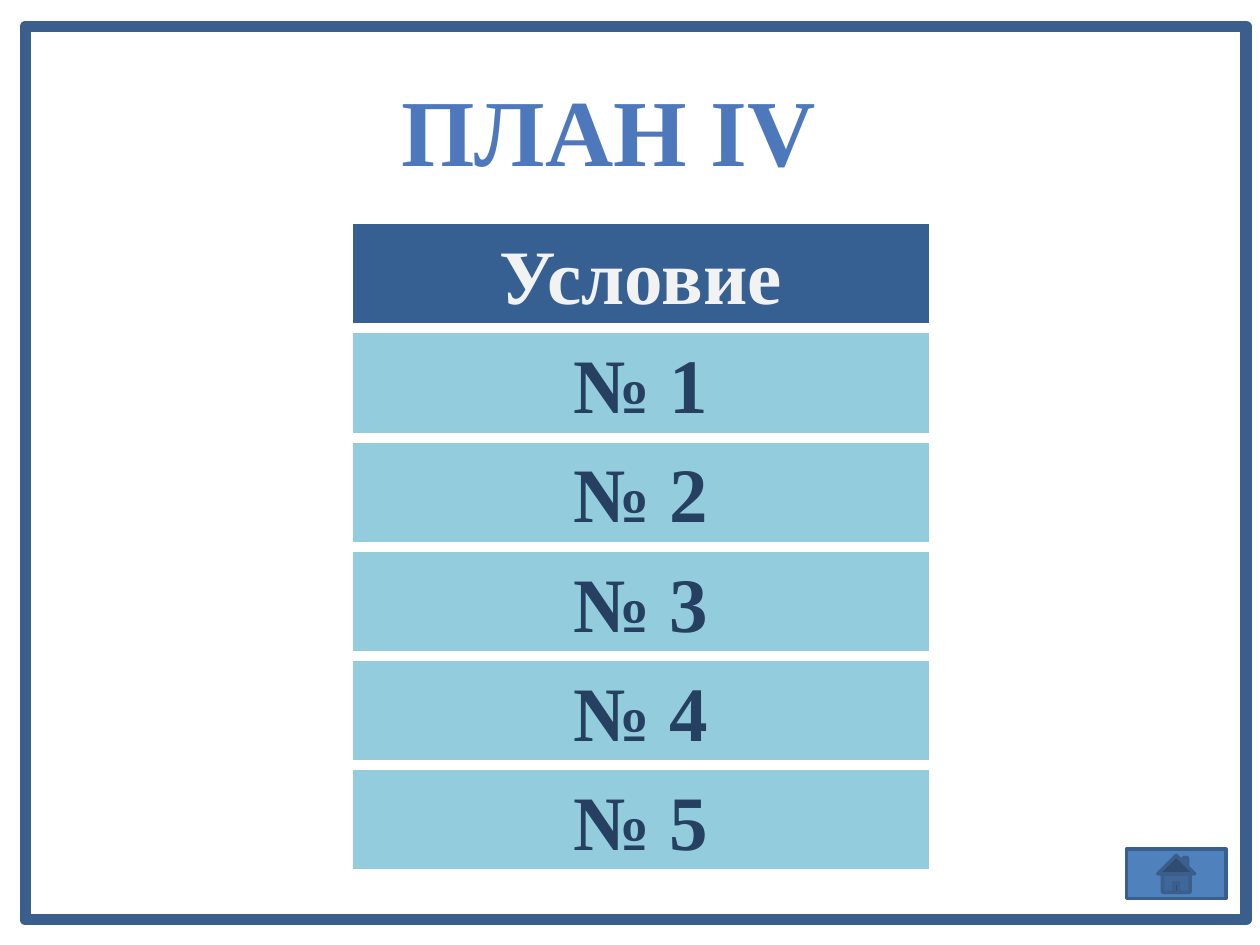
from lxml import etree
from pptx import Presentation
from pptx import util as u
from pptx.dml.color import RGBColor
from pptx.enum import shapes, text
from pptx.oxml.ns import qn

W, H = 10, 7.5
FONT = "Times New Roman"
LINE = "3A5F8C"
TITLE_BOX = (3.07, 0.52, 3.52, 1.01)
MENU_BOX = (2.8, 1.78, 4.57, 5.12)
FRAME_BOX = (0.2, 0.21, 9.69, 7.09)
HOME_BOX = (8.94, 6.74, 0.79, 0.39)
MENU = ["Условие"] + [f"№ {n}" for n in range(1, 6)]


def rgb(value):
    return RGBColor.from_string(value)


def write(shape, wording, size, color, **frame_format):
    tf = shape.text_frame
    for name, value in frame_format.items():
        setattr(tf, name, value)
    p = tf.paragraphs[0]
    p.alignment = text.PP_ALIGN.CENTER
    r = p.add_run()
    r.text = wording
    for name, value in dict(name=FONT, size=u.Pt(size), bold=True).items():
        setattr(r.font, name, value)
    r.font.color.rgb = rgb(color)


def add_box(s, kind, box, fill, line_width=None):
    sp = s.shapes.add_shape(kind, *map(u.Inches, box))
    sp.shadow.inherit = False
    sp.fill.solid()
    sp.fill.fore_color.rgb = rgb(fill)
    if line_width:
        sp.line.color.rgb = rgb(LINE)
        sp.line.width = u.Pt(line_width)
        etree.SubElement(sp.line._get_or_add_ln(), qn("a:round"))
    else:
        sp.line.fill.background()
    return sp


def add_frame(s, box):
    sp = add_box(s, shapes.MSO_SHAPE.RECTANGLE, box, "FFFFFF", 6.5)
    # Keep the frame behind the title
    s.shapes.title.element.addprevious(sp.element)


def add_title(s, box, wording):
    title = s.shapes.title
    for name, value in zip(("left", "top", "width", "height"), box):
        setattr(title, name, u.Inches(value))
    write(title, wording, 54, "4D79BC", word_wrap=False,
          auto_size=text.MSO_AUTO_SIZE.SHAPE_TO_FIT_TEXT,
          vertical_anchor=text.MSO_ANCHOR.TOP)


def add_menu(s, box, labels, gap=0.08):
    left, top, width, height = box
    pitch = (height + gap) / len(labels)
    for row, label in enumerate(labels):
        fill, color = ("93CDDD", "254061") if row else ("376092", "F2F2F2")
        sp = add_box(s, shapes.MSO_SHAPE.ACTION_BUTTON_CUSTOM,
                     (left, top + row * pitch, width, pitch - gap), fill)
        write(sp, label, 44, color, word_wrap=True,
              vertical_anchor=text.MSO_ANCHOR.MIDDLE)


def main():
    prs = Presentation()
    prs.slide_width, prs.slide_height = u.Inches(W), u.Inches(H)
    s = prs.slides.add_slide(prs.slide_layouts[5])
    add_frame(s, FRAME_BOX)
    add_title(s, TITLE_BOX, "ПЛАН IV")
    # Home button
    add_box(s, shapes.MSO_SHAPE.ACTION_BUTTON_HOME, HOME_BOX, "4F81BD", 2)
    add_menu(s, MENU_BOX, MENU)
    prs.save("out.pptx")


if __name__ == "__main__":
    main()
